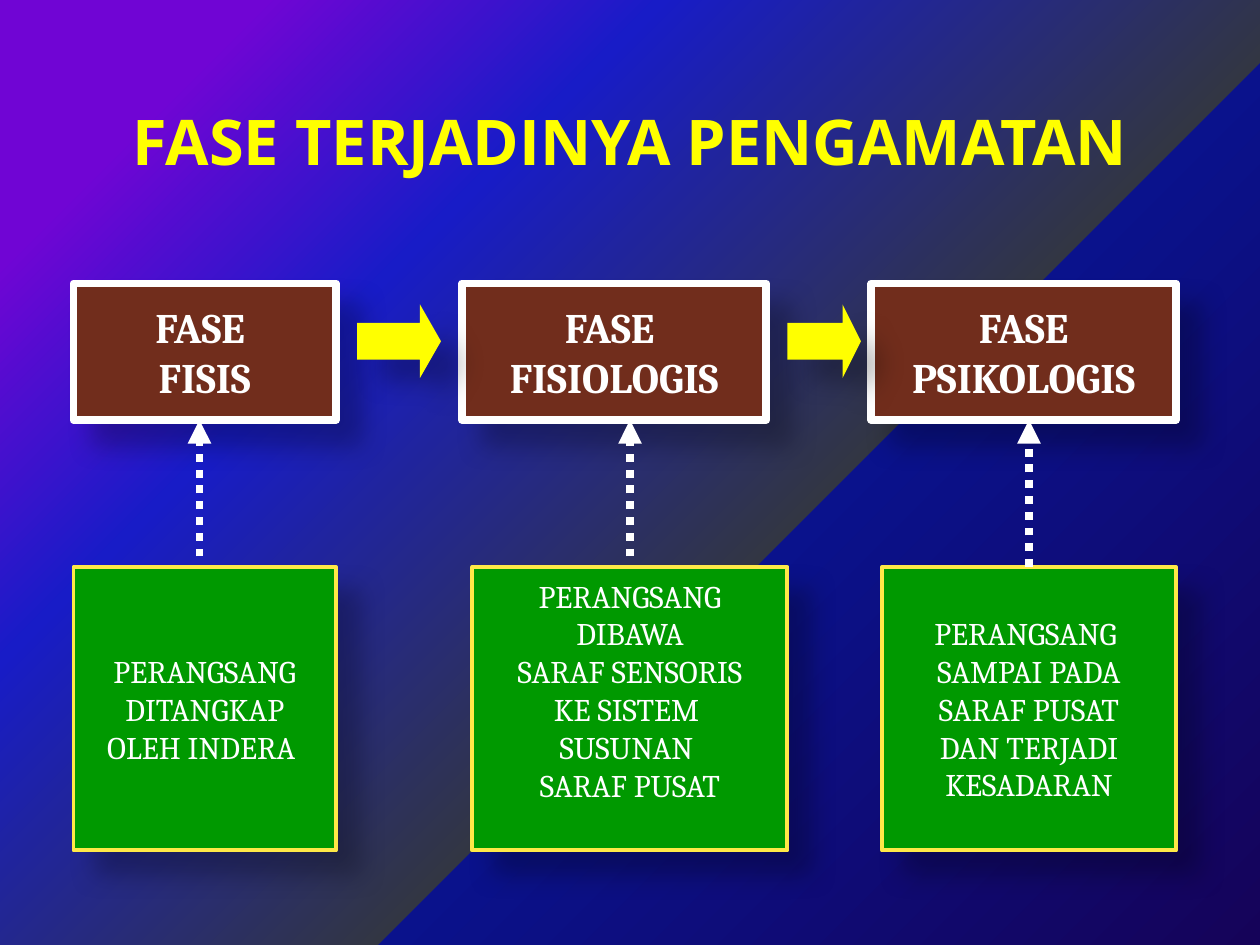
from pptx import Presentation
from pptx.dml.color import RGBColor
from pptx.enum.dml import MSO_LINE
from pptx.enum.shapes import MSO_CONNECTOR, MSO_SHAPE
from pptx.enum.text import MSO_ANCHOR, MSO_AUTO_SIZE, PP_ALIGN
from pptx.oxml import parse_xml
from pptx.oxml.ns import nsdecls
from pptx.util import Pt

COLORS = {
    "title": "FFFF00",
    "arrow": "FFFF00",
    "text": "FFFFFF",
    "phase": "712D1C",
    "phase_line": "FFFFFF",
    "detail": "009900",
    "detail_line": "FFE947",
    "shadow": "000000",
}
BACKGROUND = [(0, "150359"), (40, "0A128C"), (40, "323643"), (70, "181CC7"), (88, "7005D4")]

TITLE_FONT = {"name": "Open Sans", "size": Pt(36), "bold": True}
PHASE_FONT = {"name": "Cambria", "size": Pt(24), "bold": True}
DETAIL_FONT = {"name": "Cambria", "size": Pt(18), "bold": False}
FRAME = {
    "auto_size": MSO_AUTO_SIZE.NONE,
    "word_wrap": False,
    "vertical_anchor": MSO_ANCHOR.MIDDLE,
}

PHASE_TOP, PHASE_HEIGHT = 162, 78
DETAIL_TOP, DETAIL_HEIGHT = 324, 162
ARROW_TOP, ARROW_HEIGHT = 174, 42
PHASES = [
    {
        "phase": (42, 150, ["FASE ", "FISIS"]),
        "detail": (42, 150, ["PERANGSANG", "DITANGKAP", "OLEH INDERA "]),
        "link": (114, 318),
    },
    {
        "phase": (264, 174, ["FASE ", "FISIOLOGIS"]),
        "detail": (270, 180, ["PERANGSANG", "DIBAWA", "SARAF SENSORIS",
                              "KE SISTEM ", "SUSUNAN ", "SARAF PUSAT"]),
        "link": (360, 318),
        "bottom": 25,
    },
    {
        "phase": (498, 174, ["FASE", "PSIKOLOGIS"]),
        "detail": (504, 168, ["PERANGSANG ", "SAMPAI PADA", "SARAF PUSAT",
                              "DAN TERJADI", "KESADARAN"]),
        "link": (588, 324),
    },
]
ARROWS = [(204, 48, 0.286), (450, 42, 0.25)]


def color(name):
    return RGBColor.from_string(COLORS[name])


def apply_format(target, values):
    for name, value in values.items():
        setattr(target, name, value)


def write_lines(frame, lines, font, color_name):
    for index, line in enumerate(lines):
        para = frame.paragraphs[0] if index == 0 else frame.add_paragraph()
        para.alignment = PP_ALIGN.CENTER
        span = para.add_run()
        span.text = line
        apply_format(span.font, font)
        span.font.color.rgb = color(color_name)


def add_shadow(shape):
    shape.shadow.inherit = False
    effects = shape.element.spPr.find("./{*}effectLst")
    effects.append(parse_xml(
        f'<a:outerShdw {nsdecls("a")} blurRad="{Pt(15)}" dist="{Pt(18)}" dir="2700000" '
        f'algn="ctr" rotWithShape="0"><a:srgbClr val="{COLORS["shadow"]}">'
        '<a:alpha val="26000"/></a:srgbClr></a:outerShdw>'))


def add_background(page):
    stops = "".join(f'<a:gs pos="{place * 1000}"><a:srgbClr val="{value}"/></a:gs>'
                    for place, value in BACKGROUND)
    page.element.cSld.insert(0, parse_xml(
        f'<p:bg {nsdecls("p", "a")}><p:bgPr><a:gradFill rotWithShape="0">'
        f'<a:gsLst>{stops}</a:gsLst><a:path path="circle">'
        '<a:fillToRect l="100000" t="100000" r="0" b="0"/></a:path></a:gradFill>'
        '<a:effectLst/></p:bgPr></p:bg>'))


def add_title(page, box):
    title = page.shapes.title
    apply_format(title, dict(zip(("left", "top", "width", "height"), map(Pt, box))))
    apply_format(title.text_frame, FRAME | {"word_wrap": True})
    write_lines(title.text_frame, ["FASE TERJADINYA PENGAMATAN"], TITLE_FONT, "title")


def add_panel(page, box, lines, kind, line_width, font, bottom=3.6):
    panel = page.shapes.add_shape(MSO_SHAPE.RECTANGLE, *map(Pt, box))
    panel.fill.solid()
    panel.fill.fore_color.rgb = color(kind)
    panel.line.color.rgb = color(f"{kind}_line")
    panel.line.width = Pt(line_width)
    add_shadow(panel)
    apply_format(panel.text_frame, FRAME | {"margin_bottom": Pt(bottom)})
    write_lines(panel.text_frame, lines, font, "text")


def add_arrow(page, box, head):
    arrow = page.shapes.add_shape(MSO_SHAPE.RIGHT_ARROW, *map(Pt, box))
    arrow.adjustments[0] = 0.5
    arrow.adjustments[1] = head
    arrow.fill.solid()
    arrow.fill.fore_color.rgb = color("arrow")
    arrow.line.fill.background()
    add_shadow(arrow)


def add_link(page, x, start, end):
    link = page.shapes.add_connector(MSO_CONNECTOR.STRAIGHT, Pt(x), Pt(start), Pt(x), Pt(end))
    link.line.color.rgb = color("text")
    apply_format(link.line, {"width": Pt(4.5), "dash_style": MSO_LINE.ROUND_DOT})
    link.line._get_or_add_ln().append(parse_xml(f'<a:tailEnd {nsdecls("a")} type="triangle"/>'))
    link.element.spPr.append(parse_xml(f'<a:effectLst {nsdecls("a")}/>'))


def main():
    deck = Presentation()
    apply_format(deck, {"slide_width": Pt(720), "slide_height": Pt(540)})
    page = deck.slides.add_slide(deck.slide_layouts[5])
    add_background(page)
    add_title(page, (36, 46, 648, 68))
    for item in PHASES:
        left, width, lines = item["phase"]
        add_panel(page, (left, PHASE_TOP, width, PHASE_HEIGHT), lines, "phase", 4.5, PHASE_FONT)
    for item in PHASES:
        left, width, lines = item["detail"]
        add_panel(page, (left, DETAIL_TOP, width, DETAIL_HEIGHT), lines, "detail", 2.25,
                  DETAIL_FONT, item.get("bottom", 3.6))
    for left, width, head in ARROWS:
        add_arrow(page, (left, ARROW_TOP, width, ARROW_HEIGHT), head)
    for item in PHASES:
        add_link(page, *item["link"], PHASE_TOP + PHASE_HEIGHT)
    deck.save("out.pptx")


if __name__ == "__main__":
    main()
